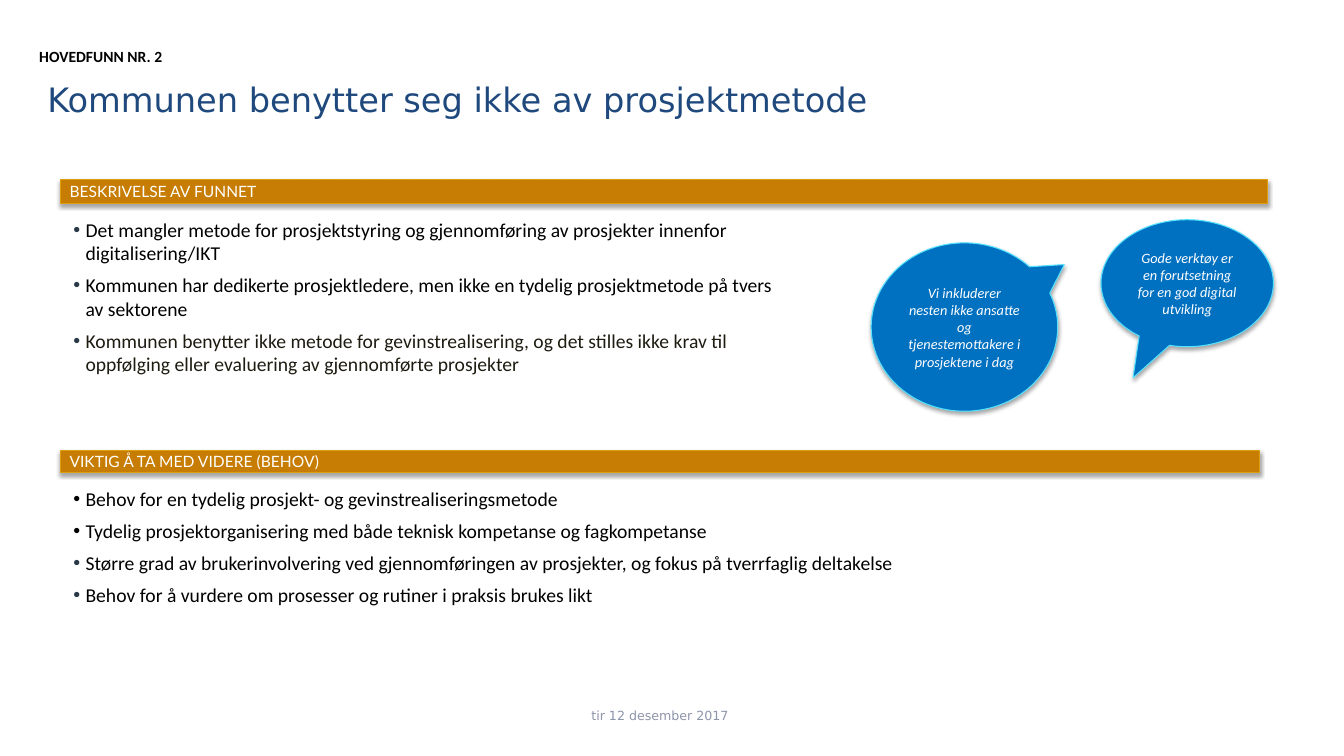
import dataclasses

import pptx
import pptx.dml.color
import pptx.enum.shapes
import pptx.enum.text
import pptx.oxml
import pptx.oxml.ns
import pptx.util

# Content: boxes are left, top, width, height in percent of the slide
LABEL = ("HOVEDFUNN NR. 2", (2.18, 5.6, 13.65, 3.87))
TITLE = ("Kommunen benytter seg ikke av prosjektmetode", (2.78, 4.8, 75.69, 16.67))
DATE = ("tir 12 desember 2017", (37.43, 92, 23.33, 5.33))


@dataclasses.dataclass(frozen=True)
class Theme:
    heading_font: str = "DejaVu Sans"
    body_font: str = "Calibri"
    bar_font: str = "Lato"
    title: str = "1F497D"
    date: str = "8D95AA"
    text: str = "000000"
    soft_text: str = "1E1C11"
    bullet: str = "293947"
    light: str = "FFFFFF"
    bar: str = "C77D03"
    bar_line: str = "DC9F10"
    callout: str = "0070C0"
    callout_line: str = "55E2FF"
    title_size: float = 24
    body_size: float = 14
    label_size: float = 11.1
    callout_size: float = 10.2
    date_size: float = 9


THEME = Theme()

# Each section: heading, bar box, list box, (text, text colour, bullet colour)
SECTIONS = [
    ("BESKRIVELSE AV FUNNET", (4.5, 23.73, 89.8, 3.2), (4.73, 28.13, 54.76, 22.4), [
        ("Det mangler metode for prosjektstyring og gjennomføring av prosjekter "
         "innenfor digitalisering/IKT", THEME.text, THEME.bullet),
        ("Kommunen har dedikerte prosjektledere, men ikke en tydelig prosjektmetode "
         "på tvers av sektorene", THEME.text, THEME.bullet),
        ("Kommunen benytter ikke metode for gevinstrealisering, og det stilles ikke krav "
         "til oppfølging eller evaluering av gjennomførte prosjekter",
         THEME.soft_text, THEME.bullet),
    ]),
    ("VIKTIG Å TA MED VIDERE (BEHOV)", (4.5, 59.6, 89.2, 2.93), (4.73, 63.73, 88.15, 17.33), [
        ("Behov for en tydelig prosjekt- og gevinstrealiseringsmetode", THEME.text, THEME.text),
        ("Tydelig prosjektorganisering med både teknisk kompetanse og fagkompetanse",
         THEME.text, THEME.text),
        ("Større grad av brukerinvolvering ved gjennomføringen av prosjekter, "
         "og fokus på tverrfaglig deltakelse", THEME.text, THEME.bullet),
        ("Behov for å vurdere om prosesser og rutiner i praksis brukes likt",
         THEME.text, THEME.bullet),
    ]),
]

# Each callout: quote, box, position of the tip
CALLOUTS = [
    ("Gode verktøy er en forutsetning for en god digital utvikling",
     (81.92, 29.07, 12.83, 16.8), (-0.314, 0.745)),
    ("Vi inkluderer nesten ikke ansatte og tjenestemottakere i prosjektene i dag",
     (64.82, 32.13, 13.88, 22.27), (0.535, -0.371)),
]

SHAPES = pptx.enum.shapes.MSO_SHAPE
ALIGN = pptx.enum.text.PP_ALIGN
ANCHOR = pptx.enum.text.MSO_ANCHOR

presentation = pptx.Presentation()
presentation.slide_width = pptx.util.Inches(13.33)
presentation.slide_height = pptx.util.Inches(7.5)
slide = presentation.slides.add_slide(presentation.slide_layouts[6])


def place(box):
    sides = (presentation.slide_width, presentation.slide_height) * 2
    return [round(side * share / 100) for side, share in zip(sides, box)]


def rgb(color):
    return pptx.dml.color.RGBColor.from_string(color)


def write(paragraph, text, *, size, font=THEME.body_font, color=THEME.text,
          bold=False, italic=False, align=ALIGN.LEFT):
    paragraph.alignment = align
    run = paragraph.add_run()
    run.text = text
    run.font.name = font
    run.font.size = pptx.util.Pt(size)
    run.font.bold = bold
    run.font.italic = italic
    run.font.color.rgb = rgb(color)


def add_frame(box, anchor=ANCHOR.TOP):
    frame = slide.shapes.add_textbox(*place(box)).text_frame
    frame.word_wrap = True
    frame.vertical_anchor = anchor
    return frame


def add_bullet(paragraph, color):
    properties = paragraph._p.get_or_add_pPr()
    properties.set("marL", str(pptx.util.Inches(0.12)))
    properties.set("indent", str(pptx.util.Inches(-0.12)))
    namespace = pptx.oxml.ns.nsdecls("a")
    for element in (f'<a:buClr {namespace}><a:srgbClr val="{color}"/></a:buClr>',
                    f'<a:buFont {namespace} typeface="Arial"/>',
                    f'<a:buChar {namespace} char="•"/>'):
        properties.append(pptx.oxml.parse_xml(element))


def add_shadowed(kind, box, fill, line):
    shape = slide.shapes.add_shape(kind, *place(box))
    shape.shadow.inherit = False
    shape.fill.solid()
    shape.fill.fore_color.rgb = rgb(fill)
    shape.line.color.rgb = rgb(line)
    shape.line.width = pptx.util.Pt(0.75)
    effects = shape._element.spPr.find(pptx.oxml.ns.qn("a:effectLst"))
    effects.append(pptx.oxml.parse_xml(
        f'<a:outerShdw {pptx.oxml.ns.nsdecls("a")} blurRad="{pptx.util.Pt(3.1)}" '
        f'dist="{pptx.util.Pt(1.8)}" dir="5400000" rotWithShape="0">'
        '<a:srgbClr val="000000"><a:alpha val="35000"/></a:srgbClr></a:outerShdw>'))
    frame = shape.text_frame
    frame.word_wrap = True
    frame.vertical_anchor = ANCHOR.MIDDLE
    frame.margin_left = frame.margin_right = pptx.util.Inches(0.09)
    return shape


# Title and date
text, box = TITLE
write(add_frame(box, ANCHOR.MIDDLE).paragraphs[0], text, size=THEME.title_size,
      font=THEME.heading_font, color=THEME.title)
text, box = DATE
write(add_frame(box, ANCHOR.MIDDLE).paragraphs[0], text, size=THEME.date_size,
      font=THEME.heading_font, color=THEME.date, align=ALIGN.CENTER)

# Section bars
for heading, bar_box, _, _ in SECTIONS:
    bar = add_shadowed(SHAPES.RECTANGLE, bar_box, THEME.bar, THEME.bar_line)
    write(bar.text_frame.paragraphs[0], heading, size=THEME.label_size,
          font=THEME.bar_font, color=THEME.light)

# Quotes
for quote, box, tip in CALLOUTS:
    callout = add_shadowed(SHAPES.OVAL_CALLOUT, box, THEME.callout, THEME.callout_line)
    callout.adjustments[0], callout.adjustments[1] = tip
    write(callout.text_frame.paragraphs[0], quote, size=THEME.callout_size,
          color=THEME.light, italic=True, align=ALIGN.CENTER)

# Bullet lists
for _, _, list_box, points in SECTIONS:
    frame = add_frame(list_box)
    for index, (point, color, bullet_color) in enumerate(points):
        paragraph = frame.add_paragraph() if index else frame.paragraphs[0]
        add_bullet(paragraph, bullet_color)
        paragraph.space_before = pptx.util.Pt(6 if index else 0)
        write(paragraph, point, size=THEME.body_size, color=color)

# Label above the title
text, box = LABEL
write(add_frame(box).paragraphs[0], text, size=THEME.label_size, bold=True)

presentation.save("out.pptx")
